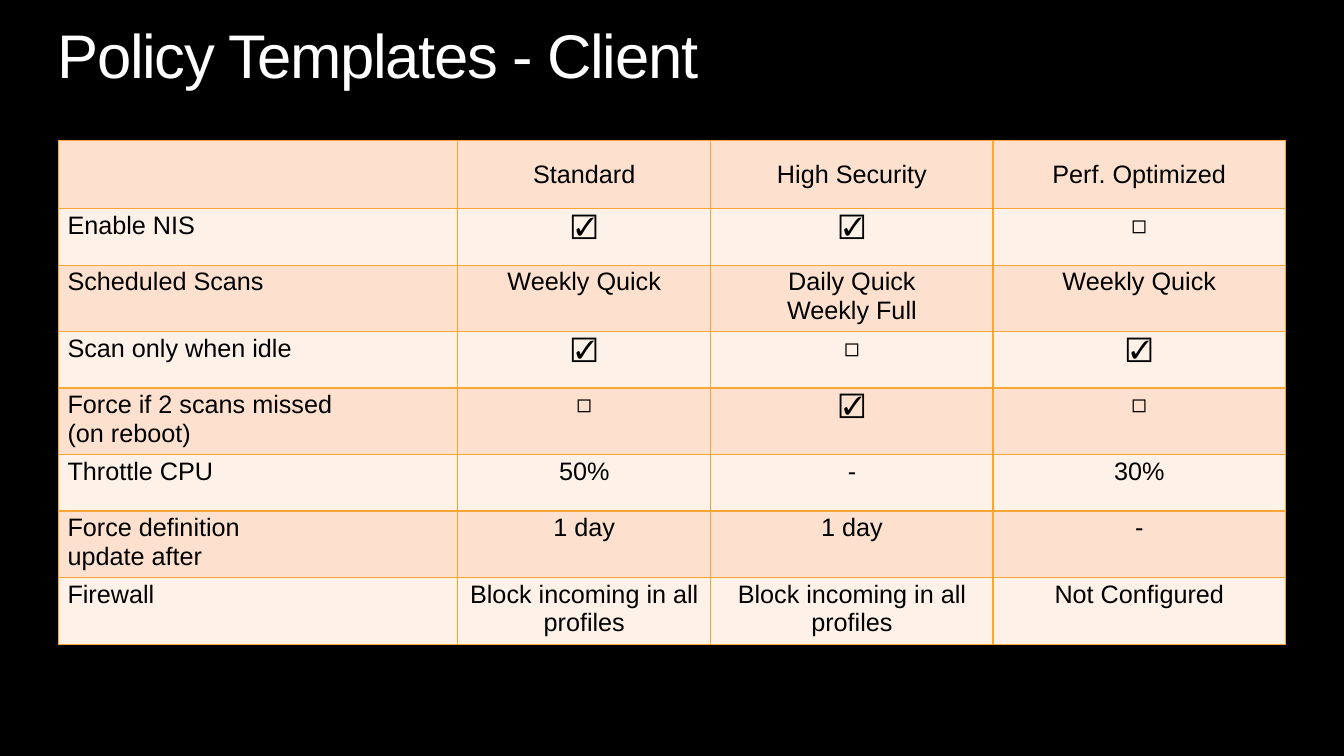
"""Build the client policy templates slide."""
from lxml import etree
from pptx import Presentation
from pptx import util as u
from pptx.dml.color import RGBColor
from pptx.enum import text as t
from pptx.oxml import ns

BLACK = RGBColor(0x00, 0x00, 0x00)
WHITE = RGBColor(0xFF, 0xFF, 0xFF)
ORANGE = RGBColor(0xFA, 0xA6, 0x34)
BANDS = [RGBColor(0xFD, 0xE1, 0xCE), RGBColor(0xFE, 0xF1, 0xE8)]

ON, OFF = "☑", "◻"
POLICIES = [
    ["", "Standard", "High Security", "Perf. Optimized"],
    ["Enable NIS", ON, ON, OFF],
    ["Scheduled Scans", "Weekly Quick", "Daily Quick\nWeekly Full", "Weekly Quick"],
    ["Scan only when idle", ON, OFF, ON],
    ["Force if 2 scans missed\n(on reboot)", OFF, ON, OFF],
    ["Throttle CPU", "50%", "-", "30%"],
    ["Force definition\nupdate after", "1 day", "1 day", "-"],
    ["Firewall", "Block incoming in all profiles",
     "Block incoming in all profiles", "Not Configured"],
]
COLUMN_WIDTHS = [3.96, 2.51, 2.8, 2.9]
HEADER_HEIGHT, ROW_HEIGHT = 0.68, 0.56


def write(paragraph, content, size=18, color=BLACK, align=t.PP_ALIGN.LEFT, spacing=None):
    paragraph.text = content
    paragraph.alignment = align
    for run in paragraph.runs:
        run.font.name = "Arial"
        run.font.size = u.Pt(size)
        run.font.color.rgb = color
        if spacing is not None:
            run.font._element.set("spc", str(spacing * 100))


def add_borders(cell, color, width):
    properties = cell._tc.get_or_add_tcPr()
    for side in ("lnL", "lnR", "lnT", "lnB"):
        line = etree.SubElement(properties, ns.qn(f"a:{side}"), w=str(u.Pt(width)))
        fill = etree.SubElement(line, ns.qn("a:solidFill"))
        etree.SubElement(fill, ns.qn("a:srgbClr"), val=str(color))


presentation = Presentation()
presentation.slide_width = u.Inches(13.33)
presentation.slide_height = u.Inches(7.5)
slide = presentation.slides.add_slide(presentation.slide_layouts[6])
slide.background.fill.solid()
slide.background.fill.fore_color.rgb = BLACK

title = slide.shapes.add_textbox(u.Inches(0.57), u.Inches(0.25), u.Inches(12.19), u.Inches(0.67))
frame = title.text_frame
frame.word_wrap = True
frame.auto_size = t.MSO_AUTO_SIZE.SHAPE_TO_FIT_TEXT
frame.margin_left = frame.margin_right = frame.margin_top = frame.margin_bottom = 0
frame.paragraphs[0].line_spacing = 0.9
write(frame.paragraphs[0], "Policy Templates - Client", size=44, color=WHITE, spacing=-1)

table_height = HEADER_HEIGHT + ROW_HEIGHT * (len(POLICIES) - 1)
table = slide.shapes.add_table(
    len(POLICIES), len(COLUMN_WIDTHS), u.Inches(0.58), u.Inches(1.39),
    u.Inches(sum(COLUMN_WIDTHS)), u.Inches(table_height)).table
for column, width in zip(table.columns, COLUMN_WIDTHS):
    column.width = u.Inches(width)

for row_index, policy in enumerate(POLICIES):
    is_header = row_index == 0
    table.rows[row_index].height = u.Inches(HEADER_HEIGHT if is_header else ROW_HEIGHT)
    for column_index, content in enumerate(policy):
        cell = table.cell(row_index, column_index)
        add_borders(cell, ORANGE, 1)
        cell.fill.solid()
        cell.fill.fore_color.rgb = BANDS[row_index % 2]
        cell.margin_left = cell.margin_right = u.Inches(0.09)
        cell.margin_top = cell.margin_bottom = u.Inches(0 if is_header else 0.03)
        cell.vertical_anchor = t.MSO_ANCHOR.MIDDLE if is_header else t.MSO_ANCHOR.TOP
        write(cell.text_frame.paragraphs[0], content,
              align=t.PP_ALIGN.CENTER if column_index else t.PP_ALIGN.LEFT)

presentation.save("out.pptx")
